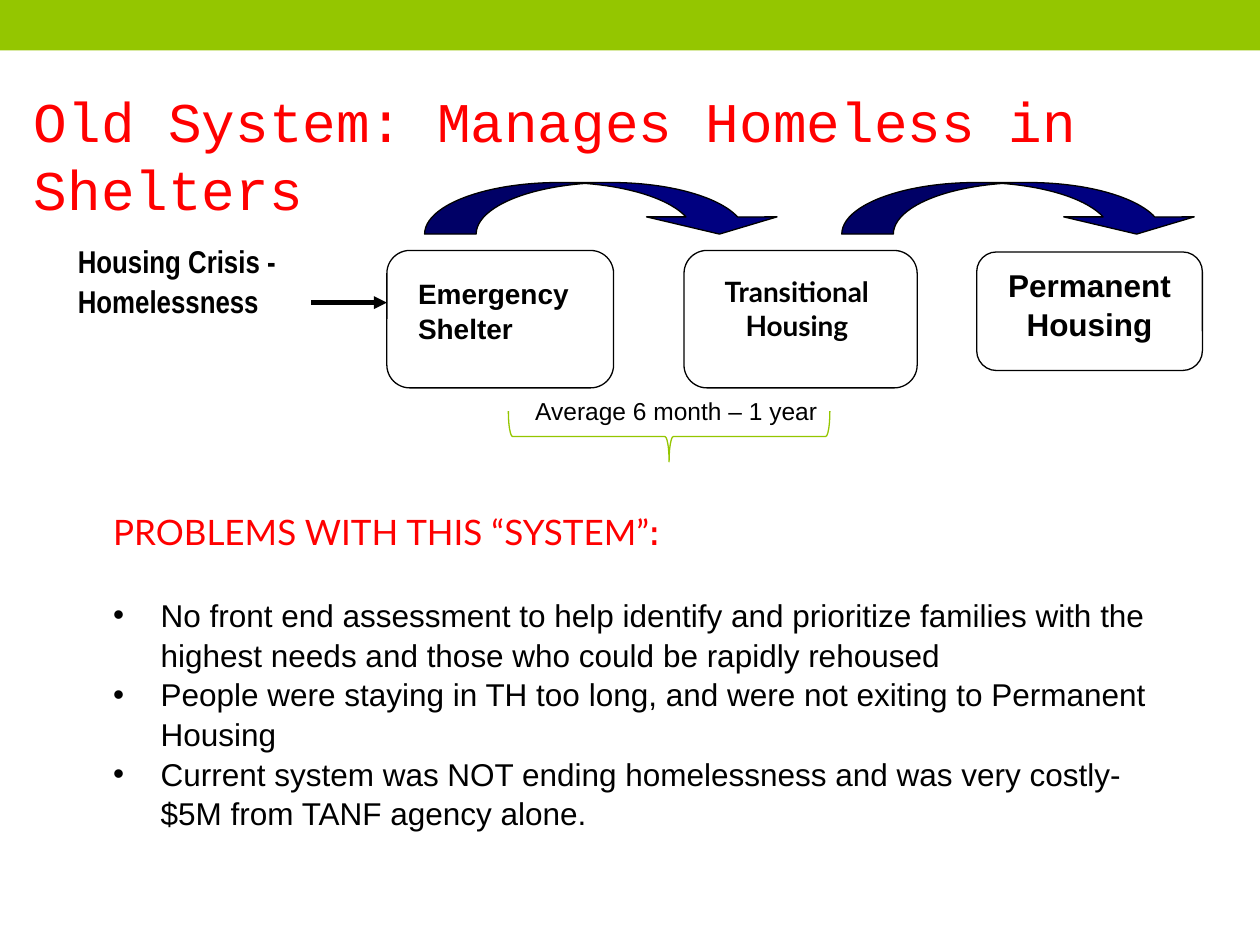
import dataclasses

import pptx
import pptx.dml.color
import pptx.enum.shapes
import pptx.enum.text
import pptx.oxml
import pptx.oxml.ns
import pptx.util

Cm = pptx.util.Cm
Pt = pptx.util.Pt
SHAPES = pptx.enum.shapes.MSO_SHAPE
ALIGN = pptx.enum.text.PP_ALIGN
ANCHOR = pptx.enum.text.MSO_ANCHOR
AUTO_SIZE = pptx.enum.text.MSO_AUTO_SIZE


@dataclasses.dataclass(frozen=True)
class Theme:
    """Colours, type sizes and line widths of the slide."""
    green: str = "94C600"
    red: str = "FF0000"
    navy: str = "000080"
    black: str = "000000"
    white: str = "FFFFFF"
    title: int = 32
    heading: int = 20
    body: int = 18
    label: int = 16
    note: int = 14
    outline: float = 0.75
    arrow: float = 2.5
    spacing: float = 1.05


THEME = Theme()


def set_attributes(target, values):
    """Set every attribute of the target from a dict."""
    for name, value in values.items():
        setattr(target, name, value)


def colour(value):
    """Turn a hex string into a colour."""
    return pptx.dml.color.RGBColor.from_string(value)


def add_element(parent, tag, **attributes):
    """Append a DrawingML element with attributes to the parent."""
    element = pptx.oxml.parse_xml(f"<a:{tag} {pptx.oxml.ns.nsdecls('a')}/>")
    for name, value in attributes.items():
        element.set(name, value)
    parent.append(element)


def add_run(paragraph, text, size, font="Arial", ink=THEME.black, bold=False):
    """Add one formatted run to a paragraph."""
    run = paragraph.add_run()
    run.text = text
    set_attributes(run.font, {"name": font, "size": Pt(size), "bold": bold})
    run.font.color.rgb = colour(ink)


def write_lines(shape, lines, size, align=ALIGN.LEFT, spacing=THEME.spacing, **style):
    """Fill a shape with wrapped, top-anchored paragraphs and return them."""
    frame = shape.text_frame
    set_attributes(frame, {"word_wrap": True, "vertical_anchor": ANCHOR.TOP,
                           "auto_size": AUTO_SIZE.NONE})
    paragraphs = []
    for index, line in enumerate(lines):
        paragraph = frame.add_paragraph() if index else frame.paragraphs[0]
        set_attributes(paragraph, {"alignment": align, "line_spacing": spacing})
        add_run(paragraph, line, size, **style)
        paragraphs.append(paragraph)
    return paragraphs


def add_text(slide, box, lines, size, **style):
    """Add a text box and return its paragraphs."""
    return write_lines(slide.shapes.add_textbox(*map(Cm, box)), lines, size, **style)


def add_figure(slide, kind, box, fill=None, line=None):
    """Add a flat preset shape with the given fill and outline."""
    shape = slide.shapes.add_shape(kind, *map(Cm, box))
    shape.shadow.inherit = False
    if fill:
        shape.fill.solid()
        shape.fill.fore_color.rgb = colour(fill)
    else:
        shape.fill.background()
    if line:
        shape.line.color.rgb = colour(line)
        shape.line.width = Pt(THEME.outline)
    else:
        shape.line.fill.background()
    return shape


def build_title(slide, box):
    """Move and format the title placeholder."""
    title = slide.shapes.title
    set_attributes(title, dict(zip(("left", "top", "width", "height"), map(Cm, box))))
    write_lines(title, ["Old System: Manages Homeless in Shelters"], THEME.title,
                spacing=Pt(38.5), font="Courier New", ink=THEME.red)
    title.text_frame.margin_top = Cm(0.3)


def build_problems(slide, box):
    """Add the heading and the bulleted problems."""
    heading, *bullets = add_text(slide, box, [
        "PROBLEMS WITH THIS “SYSTEM”",
        "No front end assessment to help identify and prioritize families with the "
        "highest needs and those who could be rapidly rehoused",
        "People were staying in TH too long, and were not exiting to Permanent Housing",
        "Current system was NOT ending homelessness and was very costly- "
        "$5M from TANF agency alone.",
    ], THEME.body)
    set_attributes(heading, {"space_after": Pt(24), "line_spacing": 1.0})
    set_attributes(heading.runs[0].font, {"name": "Lato", "size": Pt(THEME.heading)})
    heading.runs[0].font.color.rgb = colour(THEME.red)
    add_run(heading, ":", THEME.heading, "Arial Narrow", THEME.red, True)
    heading._p.get_or_add_pPr().set("marL", str(Cm(1.27)))
    for bullet in bullets:
        properties = bullet._p.get_or_add_pPr()
        properties.set("marL", str(Cm(2.23)))
        properties.set("indent", str(Cm(-0.96)))
        add_element(properties, "buFont", typeface="Arial")
        add_element(properties, "buChar", char="•")


def add_entry_arrow(slide, left, top, length):
    """Add the straight arrow that leads into the first stage."""
    arrow = slide.shapes.add_connector(
        pptx.enum.shapes.MSO_CONNECTOR.STRAIGHT,
        Cm(left), Cm(top), Cm(left + length), Cm(top))
    arrow.line.color.rgb = colour(THEME.black)
    arrow.line.width = Pt(THEME.arrow)
    add_element(arrow.line._get_or_add_ln(), "tailEnd", type="triangle")
    add_element(arrow._element.spPr, "effectLst")


def build_flow(slide, box):
    """Add the path from the crisis through the three stages."""
    left, top, width, height = box
    for offset in (7.24, 15.65):
        arrow = add_figure(slide, SHAPES.CURVED_DOWN_ARROW,
                           (left + offset, top, 7.26, 1.04), THEME.navy, THEME.black)
        for index, value in enumerate((1.265, 2.53, 0.333)):
            arrow.adjustments[index] = value

    stage_top = top + 1.37
    emergency, transitional, permanent = [
        add_figure(slide, kind, (left + offset, stage_top, stage_width, stage_height),
                   THEME.white, THEME.black)
        for kind, offset, stage_width, stage_height in (
            (SHAPES.FLOWCHART_ALTERNATE_PROCESS, 6.48, 4.57, 2.77),
            (SHAPES.ROUNDED_RECTANGLE, 12.47, 4.7, 2.77),
            (SHAPES.ROUNDED_RECTANGLE, width - 4.55, 4.55, 2.39))]
    permanent.top += Cm(0.03)
    write_lines(permanent, ["Permanent Housing"], THEME.body, ALIGN.CENTER, bold=True)

    label_top = stage_top + 0.36
    add_text(slide, (left + 6.86, label_top, 4.01, 2.08), ["Emergency Shelter"],
             THEME.label, bold=True)
    add_text(slide, (left + 12.7, label_top, 4.09, 2.08), ["Transitional Housing"],
             THEME.label, align=ALIGN.CENTER, spacing=1.0, font="Lato", bold=True)
    add_text(slide, (left, top + 1.04, 5.74, 2.41),
             ["Housing Crisis -", "Homelessness"], THEME.body,
             font="Arial Narrow", bold=True)
    add_entry_arrow(slide, left + 4.95, top + 2.42, 1.53)


def build_duration(slide, box):
    """Add the duration note with the brace below it."""
    left, top, width, height = box
    span, depth = 6.48, 1.02
    brace = add_figure(slide, SHAPES.LEFT_BRACE,
                       (left + (span - depth) / 2, top + height - (span + depth) / 2,
                        depth, span), line=THEME.green)
    brace.rotation = 270
    add_text(slide, (left + 0.29, top, width - 0.29, 0.86),
             ["Average 6 month – 1 year"], THEME.note)


def main():
    """Build and save the presentation."""
    presentation = pptx.Presentation()
    set_attributes(presentation, {"slide_width": Cm(25.4), "slide_height": Cm(19.05)})
    slide = presentation.slides.add_slide(presentation.slide_layouts[5])
    add_figure(slide, SHAPES.RECTANGLE, (0, 0, 25.4, 1.02), THEME.green)
    build_title(slide, (0.43, 1.45, 24.77, 2.24))
    build_problems(slide, (0.76, 10.16, 22.86, 7.19))
    build_flow(slide, (1.32, 3.68, 22.92, 4.14))
    build_duration(slide, (10.25, 7.82, 7.12, 1.49))
    presentation.save("out.pptx")


if __name__ == "__main__":
    main()
